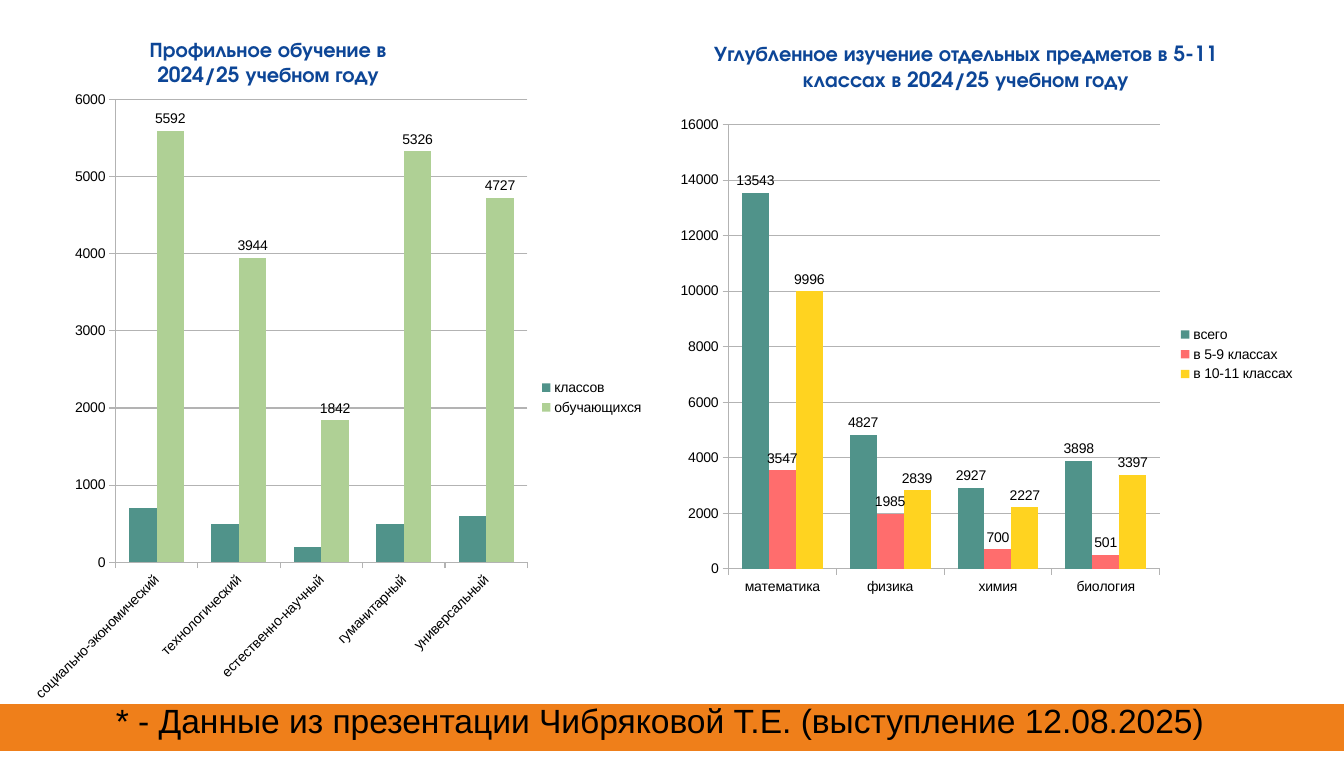
from lxml import etree
from pptx import Presentation
from pptx.chart.data import CategoryChartData
from pptx.dml.color import RGBColor
from pptx.enum.chart import XL_CHART_TYPE as ChartType
from pptx.enum.chart import XL_LABEL_POSITION as LabelPosition
from pptx.enum.chart import XL_LEGEND_POSITION as LegendPosition
from pptx.enum.chart import XL_TICK_MARK as TickMark
from pptx.enum.shapes import MSO_SHAPE as ShapeType
from pptx.enum.text import PP_ALIGN as Align
from pptx.oxml.ns import qn
from pptx.util import Cm, Pt


def color(hex_string):
    return RGBColor.from_string(hex_string)


def format_font(font, size, hex_string, name, bold=False):
    font.size, font.name, font.bold = Pt(size), name, bold
    font.color.rgb = color(hex_string)


def write(frame, text, size=24, hex_string="000000", name="Arial", bold=False):
    frame.word_wrap = True
    paragraph = frame.paragraphs[0]
    paragraph.alignment = Align.CENTER
    run = paragraph.add_run()
    run.text = text
    format_font(run.font, size, hex_string, name, bold)


class SlideBuilder:
    BODY_FONT, TITLE_FONT = "Arial", "TeX Gyre Adventor"
    TEXT, TITLE, GRID, BAND = "000000", "0D4697", "B3B3B3", "EF7F1A"

    def __init__(self, slide):
        self.slide = slide

    def text(self, place, text, **style):
        box = self.slide.shapes.add_textbox(*map(Cm, place))
        write(box.text_frame, text, **style)

    def title(self, place, text):
        self.text(place, text, size=15, hex_string=self.TITLE, name=self.TITLE_FONT, bold=True)

    def band(self, place, thickness):
        shape = self.slide.shapes.add_shape(ShapeType.MATH_MINUS, *map(Cm, place))
        shape.adjustments[0] = thickness
        shape.shadow.inherit = False
        shape.fill.solid()
        shape.fill.fore_color.rgb = color(self.BAND)
        shape.line.fill.background()

    def small_font(self, font):
        format_font(font, 10, self.TEXT, self.BODY_FONT)

    def thin_line(self, line):
        line.color.rgb = color(self.GRID)
        line.width = Pt(0)

    def axis(self, axis):
        axis.major_tick_mark, axis.minor_tick_mark = TickMark.OUTSIDE, TickMark.NONE
        self.small_font(axis.tick_labels.font)
        self.thin_line(axis.format.line)

    def plot_layout(self, chart, fractions):
        plot_area = chart._chartSpace.chart.plotArea
        for old_layout in plot_area.findall(qn("c:layout")):
            plot_area.remove(old_layout)
        layout = etree.Element(qn("c:layout"))
        manual = etree.SubElement(layout, qn("c:manualLayout"))
        settings = [("layoutTarget", "inner"), ("xMode", "edge"), ("yMode", "edge")]
        for tag, value in settings + list(zip("xywh", fractions)):
            etree.SubElement(manual, qn(f"c:{tag}")).set("val", str(value))
        plot_area.insert(0, layout)

    def columns(self, place, categories, series_rows, top, step, layout, slanted=False):
        data = CategoryChartData(number_format="General")
        data.categories = categories
        for name, values, *_ in series_rows:
            data.add_series(name, values)
        chart = self.slide.shapes.add_chart(
            ChartType.COLUMN_CLUSTERED, *map(Cm, place), data).chart
        chart.has_title = False
        self.small_font(chart.font)
        self.plot_layout(chart, layout)

        # Axes
        for axis in (chart.category_axis, chart.value_axis):
            self.axis(axis)
        if slanted:
            label_body = chart.category_axis._element.find(qn("c:txPr")).find(qn("a:bodyPr"))
            label_body.set("rot", str(-45 * 60000))
        values = chart.value_axis
        values.minimum_scale, values.maximum_scale, values.major_unit = 0, top, step
        self.thin_line(values.major_gridlines.format.line)

        # Legend
        chart.has_legend = True
        chart.legend.position = LegendPosition.RIGHT
        chart.legend.include_in_layout = False
        self.small_font(chart.legend.font)

        # Series
        plot = chart.plots[0]
        plot.gap_width, plot.overlap, plot.vary_by_categories = 100, 0, False
        for series, (_, _, fill, labelled) in zip(plot.series, series_rows):
            series.format.fill.solid()
            series.format.fill.fore_color.rgb = color(fill)
            if labelled:
                labels = series.data_labels
                labels.show_value = True
                labels.position = LabelPosition.OUTSIDE_END
                self.small_font(labels.font)


def main():
    presentation = Presentation()
    presentation.slide_width, presentation.slide_height = Cm(33.91), Cm(19.1)
    builder = SlideBuilder(presentation.slides.add_slide(presentation.slide_layouts[6]))

    # Specialised classes
    builder.columns(
        (0.51, 2.03, 16, 16),
        ["социально-экономический", "технологический", "естественно-научный",
         "гуманитарный", "универсальный"],
        [("классов", (700, 500, 200, 500, 600), "50938A", False),
         ("обучающихся", (5592, 3944, 1842, 5326, 4727), "AFD095", True)],
        top=6000, step=1000, layout=(0.15, 0.03, 0.65, 0.73), slanted=True)
    builder.title((2.51, 0.79, 8.51, 2.21), "Профильное обучение в 2024/25 учебном году")

    # Advanced study of subjects
    builder.columns(
        (16.94, 2.64, 16, 12.6),
        ["математика", "физика", "химия", "биология"],
        [("всего", (13543, 4827, 2927, 3898), "50938A", True),
         ("в 5-9 классах", (3547, 1985, 700, 501), "FF6D6D", True),
         ("в 10-11 классах", (9996, 2839, 2227, 3397), "FFD320", True)],
        top=16000, step=2000, layout=(0.09, 0.04, 0.68, 0.89))
    builder.title((16.71, 0.91, 15.32, 2.21),
                  "Углубленное изучение отдельных предметов в 5-11 классах в 2024/25 учебном году")

    # Footer band and source note
    builder.band((-10.52, 15.85, 52.04, 5), thickness=0.235)
    builder.text((0.36, 17.53, 32.59, 1.27),
                 "* - Данные из презентации Чибряковой Т.Е. (выступление 12.08.2025)")

    presentation.save("out.pptx")


if __name__ == "__main__":
    main()
